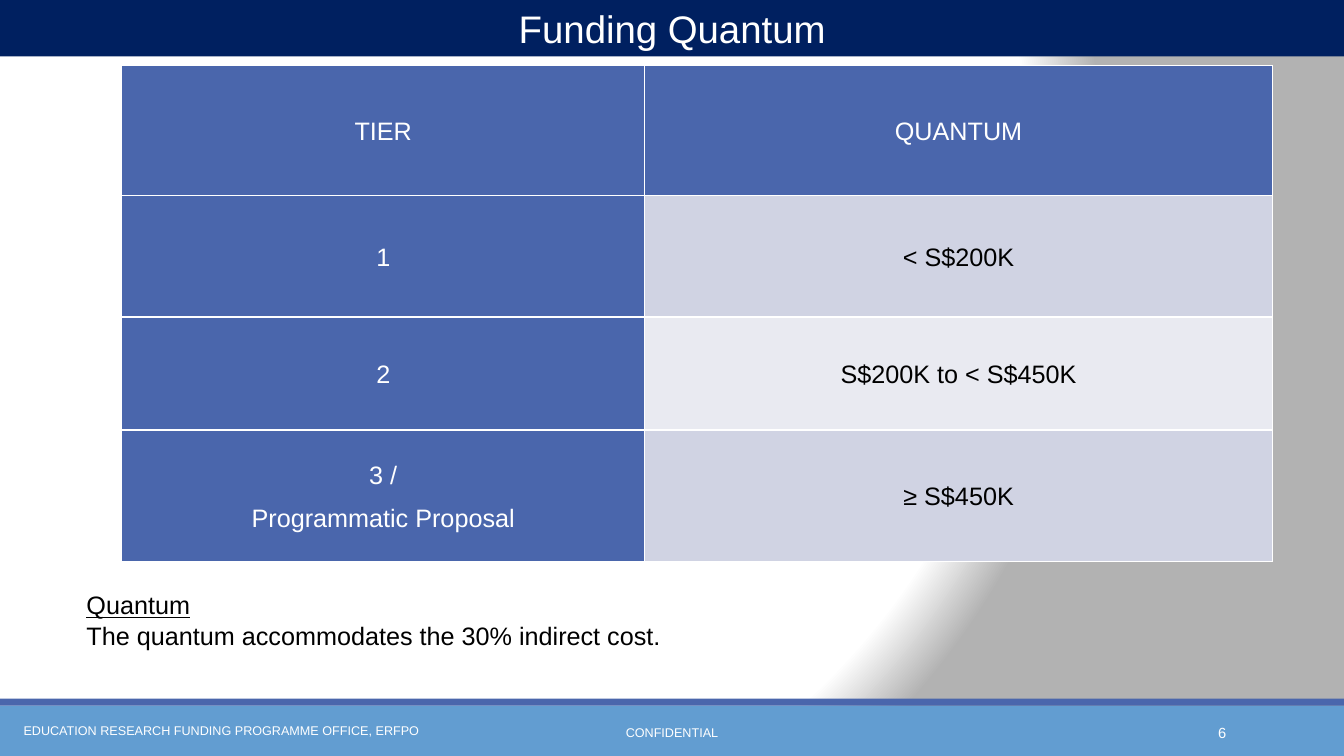
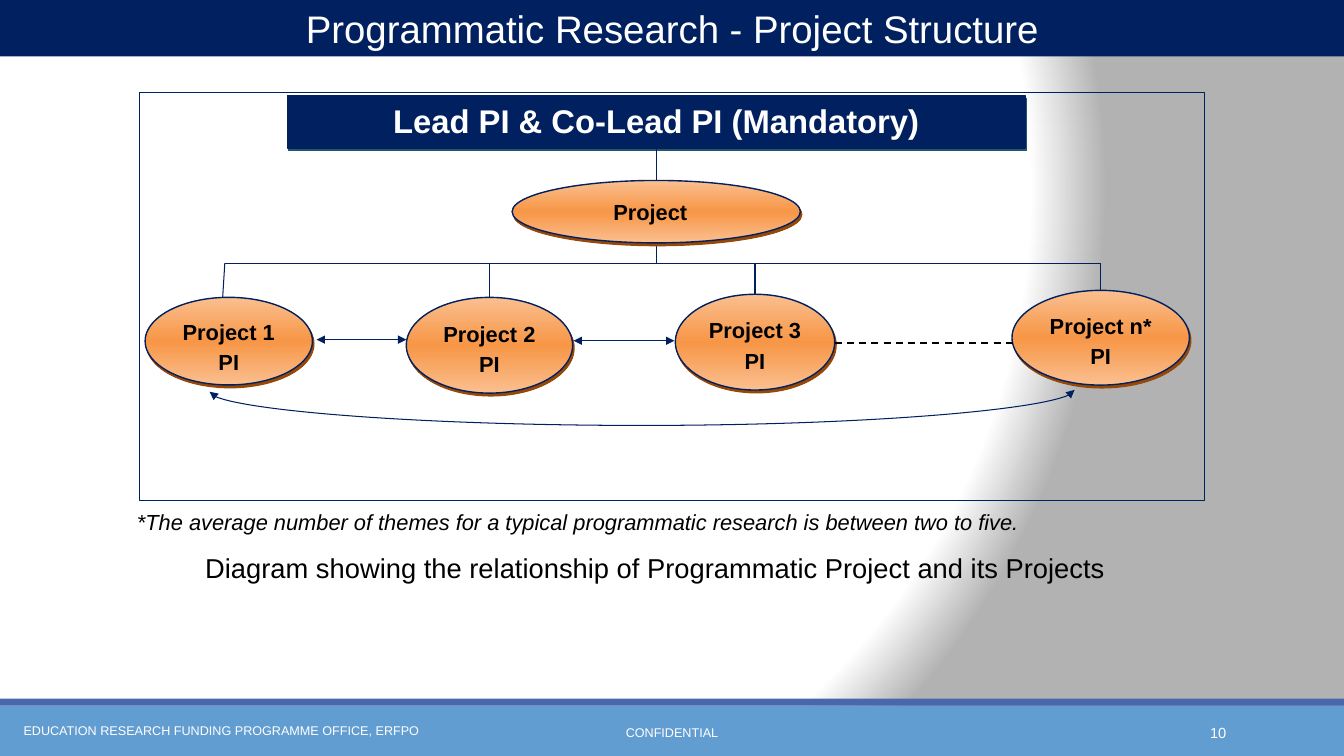
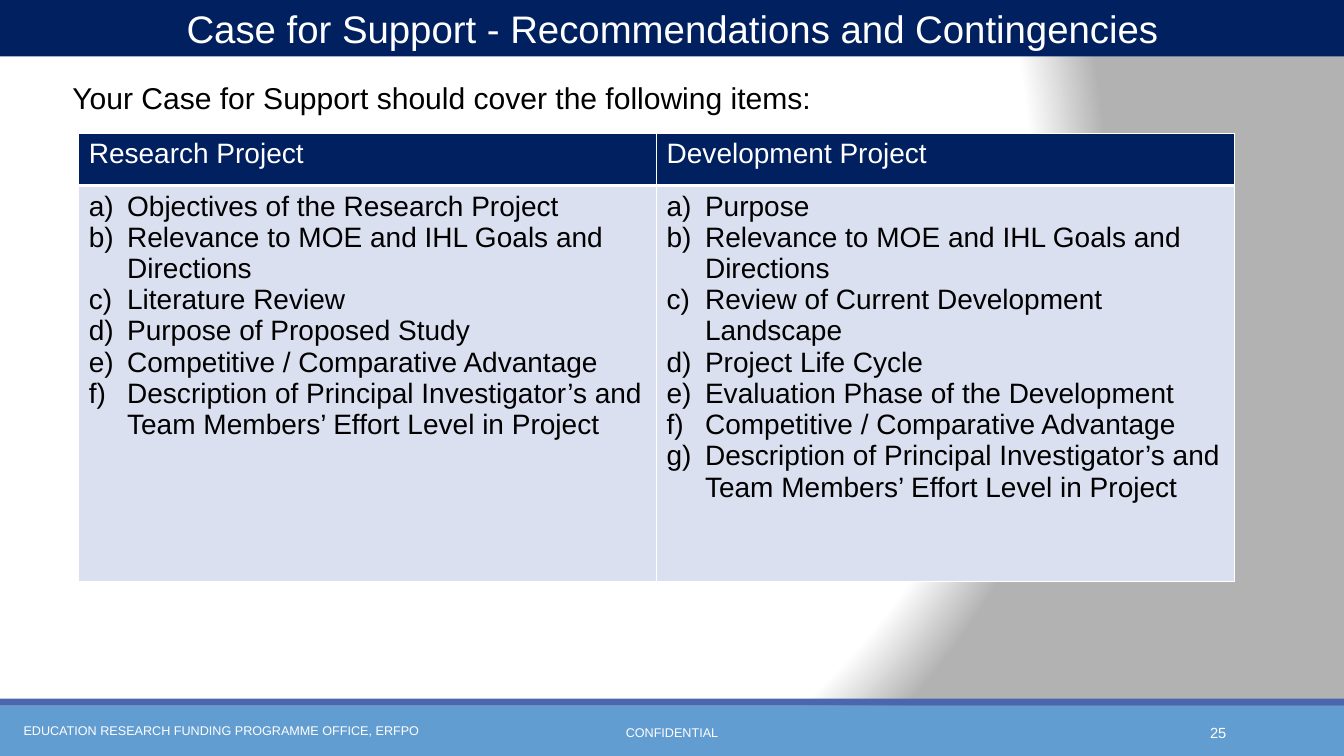
from lxml import etree
from pptx import Presentation
from pptx.dml import color as colors
from pptx.enum import dml, shapes, text
from pptx.oxml import ns
from pptx.util import Pt

FONT = "Arial"
NAVY, BLUE, SKY = "002060", "4A66AC", "629DD1"
WHITE, BLACK, GRAY = "FFFFFF", "000000", "B2B2B2"
PALE, PALER, LAVENDER = "D0D3E3", "E9EAF1", "DAE0EF"
ORANGE, PEACH, BROWN, TEAL = "F79646", "FABF8F", "974706", "205867"
WIDTH, HEIGHT = 960, 540
LEFT, CENTER, RIGHT = text.PP_ALIGN.LEFT, text.PP_ALIGN.CENTER, text.PP_ALIGN.RIGHT
TOP, MIDDLE = text.MSO_ANCHOR.TOP, text.MSO_ANCHOR.MIDDLE
RECTANGLE, OVAL = shapes.MSO_SHAPE.RECTANGLE, shapes.MSO_SHAPE.OVAL
STRAIGHT, CURVE = shapes.MSO_CONNECTOR.STRAIGHT, shapes.MSO_CONNECTOR.CURVE
INSETS = (7.2, 3.6, 7.2, 3.6)


def rgb(value):
    return colors.RGBColor.from_string(value)


def child(parent, tag, **attributes):
    element = etree.SubElement(parent, ns.qn(tag))
    for name, value in attributes.items():
        element.set(name, str(value))
    return element


def add_color(parent, value):
    child(parent, "a:srgbClr", val=value)


def set_gradient(fill, owner, stops):
    fill.gradient()
    gradient = next(owner.iter(ns.qn("a:gradFill")))
    for element in list(gradient):
        gradient.remove(element)
    stop_list = child(gradient, "a:gsLst")
    for position, value in stops:
        add_color(child(stop_list, "a:gs", pos=position * 1000), value)
    return gradient


def set_background(master):
    gradient = set_gradient(master.background.fill, master.element,
                            [(0, WHITE), (90, WHITE), (100, GRAY)])
    circle = child(gradient, "a:path", path="circle")
    child(circle, "a:fillToRect", l=50000, t=50000, r=100000, b=100000)


def write(frame, paragraphs, size=18, color=BLACK, bold=False, italic=False,
          underlined=(), align=LEFT, spacing=None, after=0, marker=None):
    if isinstance(paragraphs, str):
        paragraphs = [paragraphs]
    for index, words in enumerate(paragraphs):
        paragraph = frame.add_paragraph() if index else frame.paragraphs[0]
        paragraph.alignment = align
        paragraph.space_after = Pt(after)
        if spacing:
            paragraph.line_spacing = spacing
        if marker:
            properties = paragraph._p.get_or_add_pPr()
            properties.set("marL", str(Pt(27.4)))
            properties.set("indent", str(-Pt(27.4)))
            child(properties, "a:buFont", typeface=FONT)
            child(properties, "a:buAutoNum", type=marker)
        run = paragraph.add_run()
        run.text = words
        font = run.font
        font.name, font.size, font.color.rgb = FONT, Pt(size), rgb(color)
        font.bold, font.italic, font.underline = bold, italic, words in underlined


def set_insets(target, insets=INSETS, anchor=TOP):
    target.margin_left, target.margin_top, target.margin_right, target.margin_bottom = map(Pt, insets)
    target.vertical_anchor = anchor


def add_text(slide, box, words, anchor=TOP, **style):
    frame = slide.shapes.add_textbox(*map(Pt, box)).text_frame
    frame.word_wrap = True
    set_insets(frame, anchor=anchor)
    write(frame, words, **style)


def add_shape(slide, kind, box, fill=None, line=None, line_width=1):
    shape = slide.shapes.add_shape(kind, *map(Pt, box))
    shape.shadow.inherit = False
    if fill:
        shape.fill.solid()
        shape.fill.fore_color.rgb = rgb(fill)
    else:
        shape.fill.background()
    if line:
        shape.line.color.rgb = rgb(line)
        shape.line.width = Pt(line_width)
    else:
        shape.line.fill.background()
    return shape


def add_label(shape, words, insets=INSETS, anchor=TOP, **style):
    shape.text_frame.word_wrap = True
    set_insets(shape.text_frame, insets, anchor)
    write(shape.text_frame, words, align=CENTER, **style)


def add_shadow(shape, value):
    effects = next(shape._element.iter(ns.qn("a:effectLst")))
    shadow = child(effects, "a:outerShdw", dist=Pt(2.2), dir=63 * 60000,
                   algn="ctr", rotWithShape=0)
    add_color(shadow, value)


def add_line(slide, start, end, color=NAVY, width=0.75, arrows=False, dashed=False, kind=STRAIGHT):
    line = slide.shapes.add_connector(kind, *map(Pt, (*start, *end)))
    line.line.color.rgb = rgb(color)
    line.line.width = Pt(width)
    if dashed:
        line.line.dash_style = dml.MSO_LINE.DASH
    if arrows:
        outline = line.line._get_or_add_ln()
        child(outline, "a:headEnd", type="triangle")
        child(outline, "a:tailEnd", type="triangle")
    child(line._element.spPr, "a:effectLst")
    return line


def add_arc(slide, center, span, rise, depth):
    x, y = center
    arc = add_line(slide, (x + rise / 2, y + span / 2), (x - rise / 2, y - span / 2),
                   arrows=True, kind=CURVE)
    arc._element.spPr.find(ns.qn("a:xfrm")).set("rot", "5400000")
    geometry = arc._element.spPr.find(ns.qn("a:prstGeom"))
    for element in list(geometry):
        geometry.remove(element)
    child(child(geometry, "a:avLst"), "a:gd", name="adj1",
          fmla=f"val {round(-depth / rise * 100000)}")


def add_oval(slide, box, words, insets=INSETS):
    oval = add_shape(slide, OVAL, box, line=NAVY)
    gradient = set_gradient(oval.fill, oval._element.spPr,
                            [(0, PEACH), (50, ORANGE), (100, PEACH)])
    child(gradient, "a:lin", ang=5400000, scaled=0)
    add_shadow(oval, BROWN)
    add_label(oval, words, insets, size=15.6, bold=True, spacing=1.15, after=9.8)


def add_table(slide, position, columns, rows):
    frame = slide.shapes.add_table(len(rows), len(columns), *map(Pt, position),
                                   Pt(sum(columns)), Pt(sum(rows)))
    table = frame.table
    table.first_row = table.horz_banding = False
    for column, width in zip(table.columns, columns):
        column.width = Pt(width)
    for row, height in zip(table.rows, rows):
        row.height = Pt(height)
    return table


def fill_cell(cell, words, fill, insets=INSETS, anchor=TOP, bottom=1, **style):
    properties = cell._tc.get_or_add_tcPr()
    for side, width in (("L", 1), ("R", 1), ("T", 1), ("B", bottom)):
        border = child(properties, f"a:ln{side}", w=Pt(width))
        add_color(child(border, "a:solidFill"), WHITE)
    cell.fill.solid()
    cell.fill.fore_color.rgb = rgb(fill)
    set_insets(cell, insets, anchor)
    write(cell.text_frame, words, **style)


def add_slide(presentation, title, number):
    slide = presentation.slides.add_slide(presentation.slide_layouts[6])
    add_shape(slide, RECTANGLE, (0, 504, WIDTH, 36), SKY)
    add_shape(slide, RECTANGLE, (0, 499, WIDTH, 5), BLUE)
    band = add_shape(slide, RECTANGLE, (0, 0, WIDTH, 40.3), NAVY)
    add_label(band, title, size=27.4, color=WHITE)
    for box, words, size, align in (
        ((0, 507.5, 316, 29), "EDUCATION RESEARCH FUNDING PROGRAMME OFFICE, ERFPO", 9, CENTER),
        ((290, 508.5, 380, 29), "CONFIDENTIAL", 9, CENTER),
        ((780, 508.5, 103, 29), str(number), 10.5, RIGHT),
    ):
        add_text(slide, box, words, anchor=MIDDLE, size=size, color=WHITE, align=align)
    return slide


def build_funding(presentation):
    slide = add_slide(presentation, "Funding Quantum", 6)
    table = add_table(slide, (87, 46.8), (373.5, 448.5), (92.9, 86.8, 80.6, 94.3))
    content = [
        ("TIER", "QUANTUM", BLUE),
        ("1", "< S$200K", PALE),
        ("2", "S$200K to < S$450K", PALER),
        (["3 /", "Programmatic Proposal"], "≥ S$450K", PALE),
    ]
    for index, (tier, quantum, fill) in enumerate(content):
        for column, (words, shade) in enumerate(((tier, BLUE), (quantum, fill))):
            fill_cell(table.cell(index, column), words, shade, (2.9, 0.7, 2.9, 0), MIDDLE,
                      color=WHITE if shade == BLUE else BLACK,
                      align=CENTER, spacing=1.05, after=10)
    add_text(slide, (54.7, 417.6, 905, 51),
             ["Quantum", "The quantum accommodates the 30% indirect cost."], underlined=("Quantum",))


def build_structure(presentation):
    slide = add_slide(presentation, "Programmatic Research - Project Structure", 10)
    add_shape(slide, RECTANGLE, (99.4, 66.2, 761, 291.6), line=NAVY, line_width=0.75)
    lead = add_shape(slide, RECTANGLE, (205.2, 68.4, 527, 37.4), NAVY, NAVY)
    add_shadow(lead, TEAL)
    add_label(lead, "Lead PI & Co-Lead PI (Mandatory)", size=23.4, color=WHITE, bold=True)

    bus = 188
    add_line(slide, (468.7, 106.6), (468.7, bus))
    add_line(slide, (160.6, bus), (785.8, bus))
    for top, bottom, end in ((160.6, 159.1, 212), (349.9, 349.9, 212.4),
                             (539.3, 539.3, 210.2), (785.8, 785.8, 207.4)):
        add_line(slide, (top, bus), (bottom, end))
    for start, end, y in ((226.1, 290.2, 242.6), (409.7, 481.7, 243.4)):
        add_line(slide, (start, y), (end, y), arrows=True)
    add_arc(slide, (458.6, 279.2), 617.8, 1.3, 24)

    add_oval(slide, (365.8, 128.9, 205.9, 44.6), "Project", (7.2, 3.6, 15.5, 3.6))
    for box, words in (
        ((103.7, 212.4, 119.5, 62.6), "Project 1 PI"),
        ((290.2, 212.4, 118.8, 68.4), "Project 2 PI"),
        ((482.4, 210.2, 113.8, 68.4), "Project 3 PI"),
        ((722.9, 207.4, 126.7, 67.7), "Project n* PI"),
    ):
        add_oval(slide, box, words, (6, 3.6, 6, 3.6))
    add_line(slide, (596.2, 244.8), (723.6, 244.8), BLACK, 1.25, dashed=True)

    add_text(slide, (90.7, 360, 660, 26),
             "*The average number of themes for a typical programmatic research is between two to five.",
             size=15.6, italic=True)
    add_text(slide, (87.8, 393.1, 761, 28),
             "Diagram showing the relationship of Programmatic Project and its Projects",
             size=19.5, align=CENTER, spacing=0.9)


def build_support(presentation):
    slide = add_slide(presentation, "Case for Support - Recommendations and Contingencies", 25)
    add_text(slide, (44.6, 56.9, 849, 30), "Your Case for Support should cover the following items:",
             size=21.5, spacing=Pt(22.1))
    goals = "Relevance to MOE and IHL Goals and Directions"
    advantage = "Competitive / Comparative Advantage"
    team = "Description of Principal Investigator’s and Team Members’ Effort Level in Project"
    projects = {
        "Research Project": ["Objectives of the Research Project", goals, "Literature Review",
                             "Purpose of Proposed Study", advantage, team],
        "Development Project": ["Purpose", goals, "Review of Current Development Landscape",
                                "Project Life Cycle", "Evaluation Phase of the Development",
                                advantage, team],
    }
    table = add_table(slide, (56.2, 95.2), (412.8, 412.8), (37.4, 282.6))
    for column, (heading, items) in enumerate(projects.items()):
        fill_cell(table.cell(0, column), heading, NAVY, bottom=3, size=20, color=WHITE)
        fill_cell(table.cell(1, column), items, LAVENDER, size=20, marker="alphaLcParenR")


def main():
    presentation = Presentation()
    presentation.slide_width, presentation.slide_height = Pt(WIDTH), Pt(HEIGHT)
    set_background(presentation.slide_master)
    build_funding(presentation)
    build_structure(presentation)
    build_support(presentation)
    presentation.save("out.pptx")


if __name__ == "__main__":
    main()
